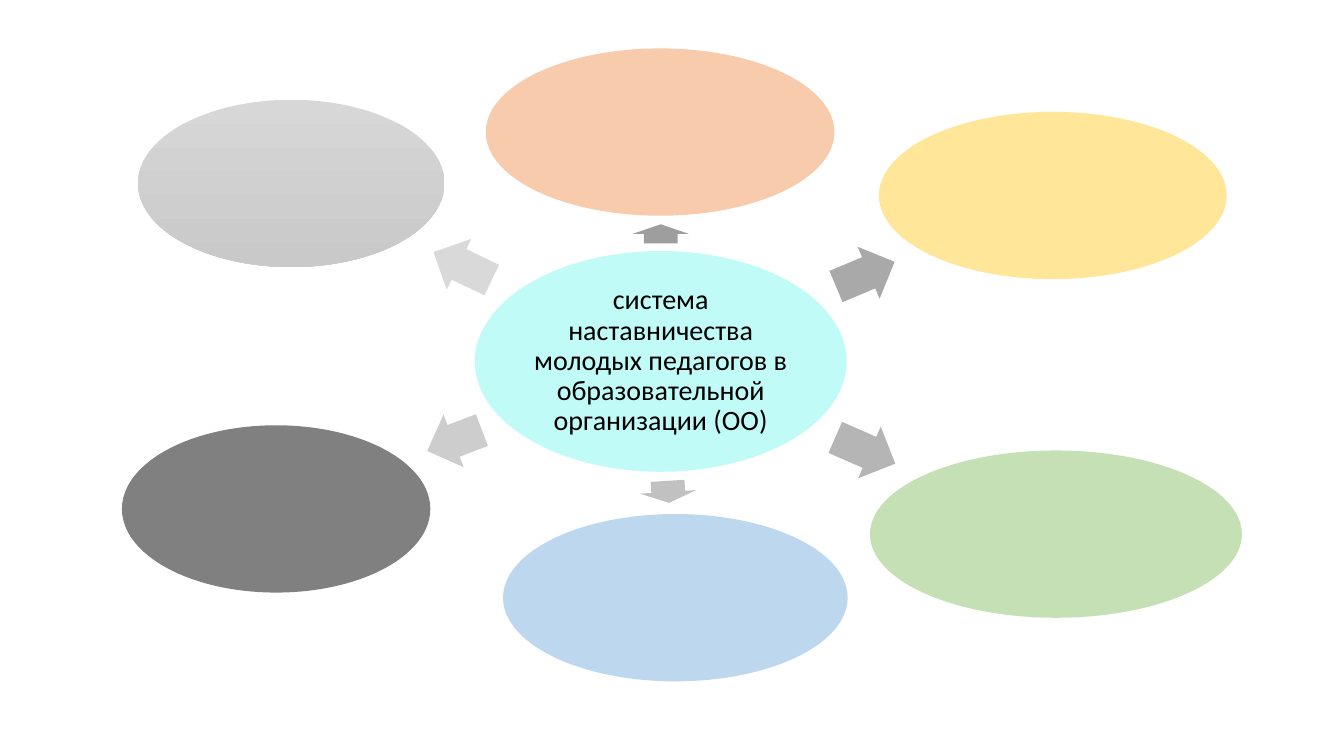
import dataclasses

import pptx
import pptx.dml.color
import pptx.enum.shapes
import pptx.enum.text
import pptx.shapes.autoshape
import pptx.util

Pt = pptx.util.Pt
Kind = pptx.enum.shapes.MSO_SHAPE

HUES = {
    "hub": "C1FBF7", "text": "000000",
    "peach": "F8CBAD", "gold": "FFE699", "green": "C5E0B4",
    "blue": "BDD7EE", "dark": "808080",
    "silver top": "D7D7D7", "silver end": "C9C9C9",
    "arrow 1": "9E9E9E", "arrow 2": "A9A9A9", "arrow 3": "B5B5B5",
    "arrow 4": "C1C1C1", "arrow 5": "CDCDCD", "arrow 6": "D9D9D9",
}
OVAL_H = 119.5
ARROW_H = 40.3


@dataclasses.dataclass
class Oval:
    left: float
    top: float
    width: float
    hues: tuple[str, ...]  # one name is solid, two run top to bottom
    height: float = OVAL_H


@dataclasses.dataclass
class Arrow:
    left: float
    top: float
    width: float
    turn: float


HUB = Oval(339.1, 179.3, 265.7, ("hub",), 157.7)

# Each arrow with the oval it points to, clockwise from the top
SPOKES = [
    (Arrow(465.1, 146.9, 13.7, 270), Oval(347, 34.6, 249.1, ("peach",))),
    (Arrow(595.4, 175.7, 45.4, 337.1), Oval(627.8, 79.9, 248.4, ("gold",))),
    (Arrow(594.7, 301.7, 46.8, 23.6), Oval(621.4, 321.8, 265.7, ("green",))),
    (Arrow(469.4, 331.2, 15.8, 86.4), Oval(359.3, 367.2, 246.2, ("blue",))),
    (Arrow(303.8, 294.5, 41.8, 159), Oval(87.1, 303.8, 220.3, ("dark",))),
    (Arrow(307.4, 169.9, 46.1, 205.7),
     Oval(98.6, 71.3, 218.9, ("silver top", "silver end"))),
]


def shade(name: str) -> pptx.dml.color.RGBColor:
    return pptx.dml.color.RGBColor.from_string(HUES[name])


def add_form(slide, kind: Kind, item: Oval | Arrow, height: float,
             hues: tuple[str, ...]) -> pptx.shapes.autoshape.Shape:
    form = slide.shapes.add_shape(
        kind, Pt(item.left), Pt(item.top), Pt(item.width), Pt(height))
    form.shadow.inherit = False
    form.line.fill.background()
    if len(hues) == 1:
        form.fill.solid()
        form.fill.fore_color.rgb = shade(hues[0])
    else:
        form.fill.gradient()
        form.fill.gradient_angle = 270
        for stop, hue in zip(form.fill.gradient_stops, hues):
            stop.color.rgb = shade(hue)
    return form


def add_oval(slide, oval: Oval) -> pptx.shapes.autoshape.Shape:
    return add_form(slide, Kind.OVAL, oval, oval.height, oval.hues)


def add_arrow(slide, arrow: Arrow, hue: str) -> None:
    form = add_form(slide, Kind.RIGHT_ARROW, arrow, ARROW_H, (hue,))
    form.adjustments[0] = 0.6
    form.adjustments[1] = 0.5
    form.rotation = arrow.turn


def add_label(form: pptx.shapes.autoshape.Shape, text: str) -> None:
    frame = form.text_frame
    frame.word_wrap = True
    frame.vertical_anchor = pptx.enum.text.MSO_ANCHOR.MIDDLE
    frame.margin_left = frame.margin_right = Pt(2)
    frame.margin_top = frame.margin_bottom = Pt(2)
    para = frame.paragraphs[0]
    para.alignment = pptx.enum.text.PP_ALIGN.CENTER
    para.line_spacing = 0.9
    run = para.add_run()
    run.text = text
    run.font.name = "Calibri"
    run.font.size = Pt(20)
    run.font.color.rgb = shade("text")


def main() -> None:
    deck = pptx.Presentation()
    deck.slide_width, deck.slide_height = Pt(960), Pt(540)
    slide = deck.slides.add_slide(deck.slide_layouts[6])

    # Hub with the topic
    hub = add_oval(slide, HUB)
    add_label(hub, "система наставничества молодых педагогов в "
                   "образовательной организации (ОО)")

    # Spokes around the hub
    for rank, (arrow, oval) in enumerate(SPOKES, 1):
        add_arrow(slide, arrow, f"arrow {rank}")
        add_oval(slide, oval)

    deck.save("out.pptx")


if __name__ == "__main__":
    main()
